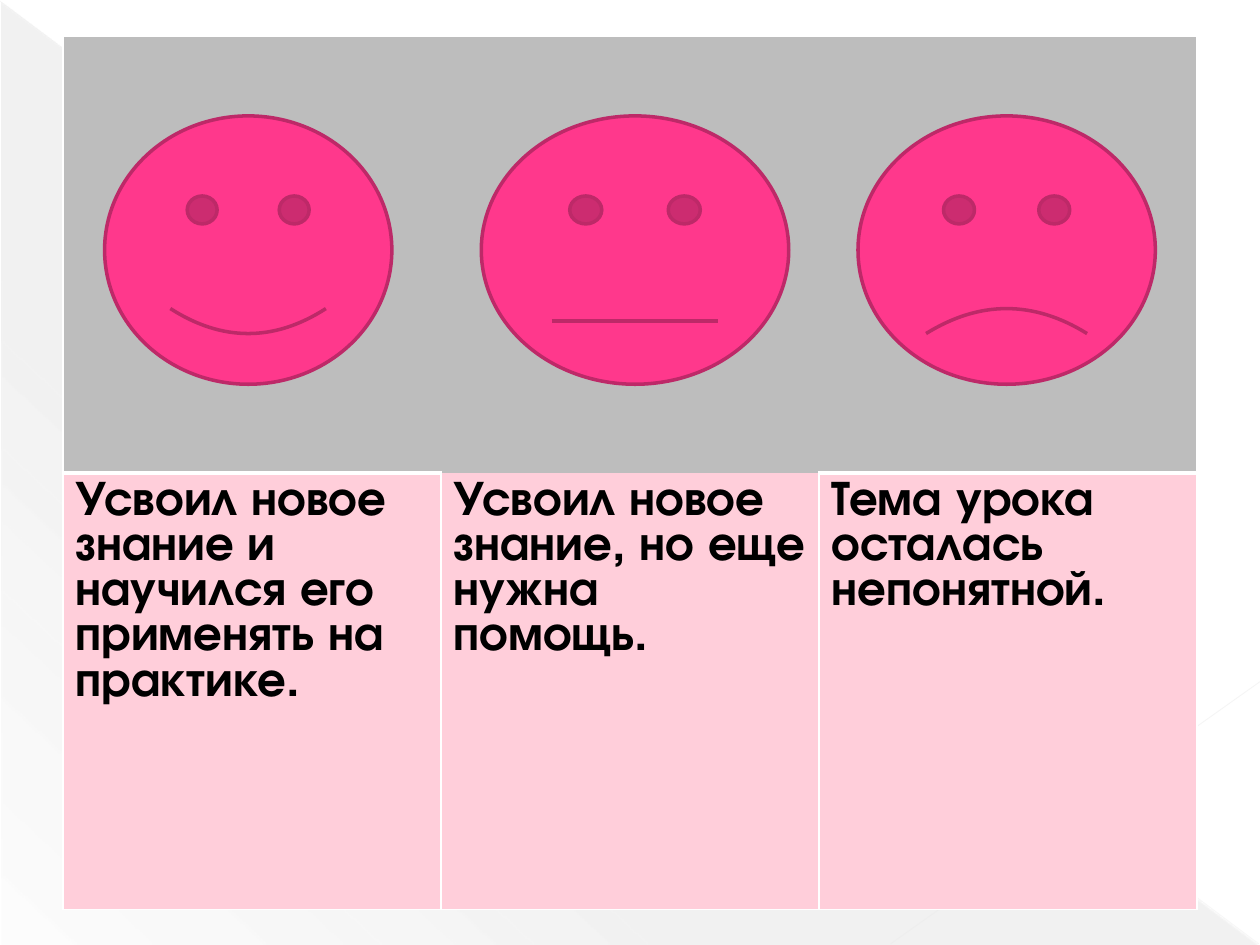
from dataclasses import dataclass

from lxml import etree
from pptx import Presentation
from pptx import util as u
from pptx.dml.color import RGBColor
from pptx.enum import shapes
from pptx.oxml.ns import qn


@dataclass(frozen=True)
class Theme:
    font: str = "TeX Gyre Adventor"
    text_size: float = 28
    text: str = "000000"
    face: str = "FF388C"
    face_line: str = "BD2968"
    face_row: str = "BDBDBD"
    answer_row: str = "FFCEDA"
    border: str = "FFFFFF"
    thin: float = 1
    thick: float = 3
    shade: str = "666666"


THEME = Theme()
WIDTH, HEIGHT = 10, 7.5
# Each answer: wording, share of the slide width for the face (left, width), mouth bend
ANSWERS = [
    ("Усвоил новое знание и научился его применять на практике.", 0.083, 0.228, 0.0465),
    ("Усвоил новое знание, но еще нужна помощь.", 0.382, 0.244, 0),
    ("Тема урока осталась непонятной.", 0.681, 0.236, -0.047),
]


def rgb(code):
    return RGBColor.from_string(code)


def inches(*lengths):
    return [u.Inches(length) for length in lengths]


def add_color(parent, code, opacity=100):
    color = etree.SubElement(parent, qn("a:srgbClr"), val=code)
    if opacity < 100:
        etree.SubElement(color, qn("a:alpha"), val=str(opacity * 1000))


def add_hairline(page, start, end, code, weight, opacity):
    line = page.shapes.add_connector(shapes.MSO_CONNECTOR.STRAIGHT, *inches(*start, *end))
    line.line.width = u.Pt(weight)
    line.line.color.rgb = rgb(code)
    color = line.line._ln.find(".//" + qn("a:srgbClr"))
    etree.SubElement(color, qn("a:alpha"), val=str(opacity * 1000))
    etree.SubElement(line._element.spPr, qn("a:effectLst"))


def draw_backdrop(page, left, top, width, height):
    # Pale corner triangle, fading towards the lower left
    corner = page.shapes.add_shape(
        shapes.MSO_SHAPE.RIGHT_TRIANGLE, *inches(left, top, width, height))
    corner.shadow.inherit = False
    corner.line.fill.background()
    corner.fill.gradient()
    gradient = corner._element.spPr.find(qn("a:gradFill"))
    for child in list(gradient):
        gradient.remove(child)
    stops = etree.SubElement(gradient, qn("a:gsLst"))
    for position, opacity in ((0, 10), (70, 8), (100, 1)):
        stop = etree.SubElement(stops, qn("a:gs"), pos=str(position * 1000))
        add_color(stop, THEME.shade, opacity)
    etree.SubElement(gradient, qn("a:lin"), ang=str(133 * 60000), scaled="0")

    # Fine diagonals
    right, bottom = left + width, top + height
    add_hairline(page, (0, 0.01), (right, bottom - 0.01), "E8E8E8", 0.39, 35)
    add_hairline(page, (WIDTH, 5.41), (7.07, bottom - 0.01), "EAEAEA", 0.47, 45)


def style_cell(cell, fill, borders):
    cell.fill.solid()
    cell.fill.fore_color.rgb = rgb(fill)
    properties = cell._tc.get_or_add_tcPr()
    for index, side in enumerate(("L", "R", "T", "B")):
        weight = borders.get(side, 0)
        line = etree.Element(qn("a:ln" + side), w=str(u.Pt(weight)))
        if weight:
            add_color(etree.SubElement(line, qn("a:solidFill")), THEME.border)
        else:
            etree.SubElement(line, qn("a:noFill"))
        properties.insert(index, line)


def draw_answer_table(page, left, top, width, height):
    frame = page.shapes.add_table(2, len(ANSWERS), *inches(left, top, width, height))
    table = frame.table
    table.first_row = table.horz_banding = False
    last = len(ANSWERS) - 1
    for column, (wording, *_) in enumerate(ANSWERS):
        # Only the outer columns have a top edge and a thick divider
        outer = column in (0, last)
        edge = THEME.thin if outer else 0
        divider = THEME.thick if outer else 0
        style_cell(table.cell(0, column), THEME.face_row, {
            "L": THEME.thin if column == 0 else 0,
            "R": THEME.thin if column == last else 0,
            "T": edge, "B": divider})
        answer = table.cell(1, column)
        style_cell(answer, THEME.answer_row, {
            "L": THEME.thin, "R": THEME.thin, "T": divider, "B": THEME.thin})
        span = answer.text_frame.paragraphs[0].add_run()
        span.text = wording
        span.font.name = THEME.font
        span.font.size = u.Pt(THEME.text_size)
        span.font.bold = True
        span.font.color.rgb = rgb(THEME.text)


def draw_faces(page, top, height):
    for _, left, width, bend in ANSWERS:
        face = page.shapes.add_shape(
            shapes.MSO_SHAPE.SMILEY_FACE,
            *inches(left * WIDTH, top, width * WIDTH, height))
        face.adjustments[0] = bend
        face.shadow.inherit = False
        face.fill.solid()
        face.fill.fore_color.rgb = rgb(THEME.face)
        face.line.color.rgb = rgb(THEME.face_line)
        face.line.width = u.Pt(2)


def main():
    deck = Presentation()
    deck.slide_width, deck.slide_height = inches(WIDTH, HEIGHT)
    page = deck.slides.add_slide(deck.slide_layouts[6])
    draw_backdrop(page, 0.01, 0.02, 9.98, 7.48)
    draw_answer_table(page, 0.5, 0.29, 0.9 * WIDTH, 6.93)
    draw_faces(page, 0.92, 2.13)
    deck.save("out.pptx")


if __name__ == "__main__":
    main()
